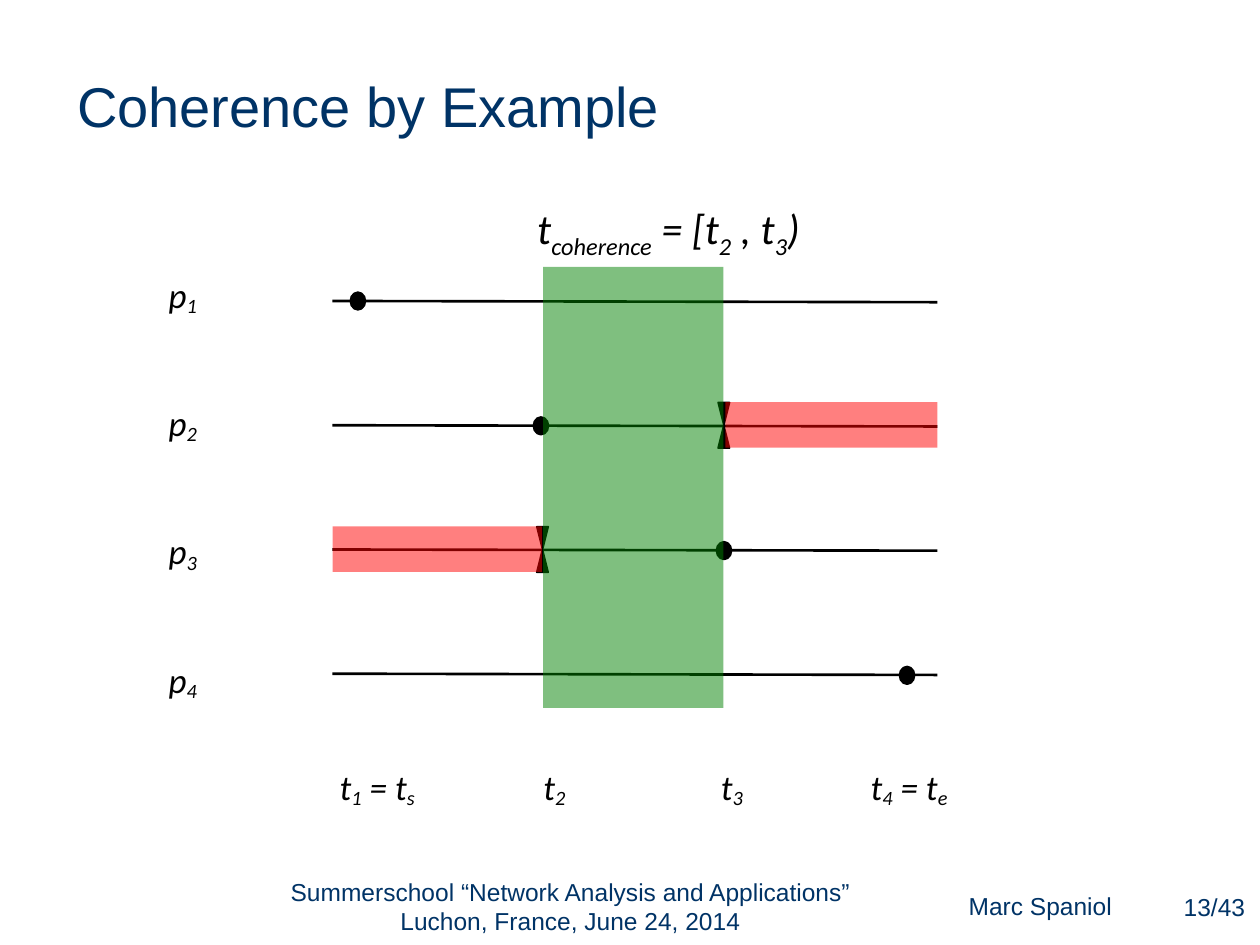
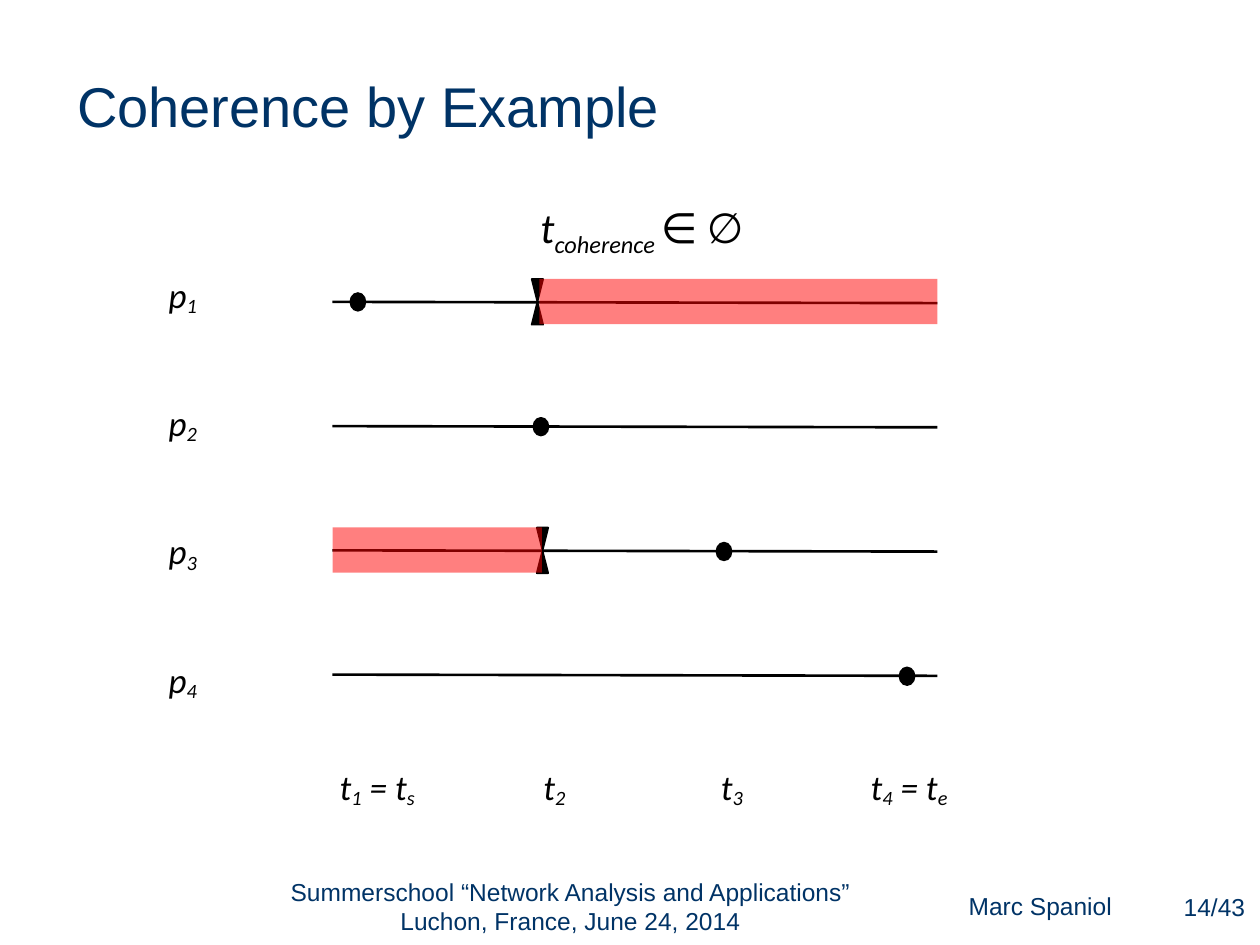
from lxml import etree
from pptx import Presentation
from pptx.dml import color
from pptx.enum import shapes, text
from pptx.oxml import ns
from pptx.util import Pt

NAVY, BLACK, GREEN, RED = "003366", "000000", "008000", "FF0000"
SHAPE = shapes.MSO_SHAPE
MIDDLE, TOP = text.MSO_ANCHOR.MIDDLE, text.MSO_ANCHOR.TOP
CENTER, LEFT = text.PP_ALIGN.CENTER, text.PP_ALIGN.LEFT

LINE_LENGTH, ROW_GAP, LINE_DROP = 345.7, 71, 0.7
BAR_HEIGHT = 26
TIME_WIDTH = 80
PAGES = ["p|1", "p|2", "p|3", "p|4"]
TIMES = ["t|1| = t|s", "t|2", "t|3", "t|4| = t|e"]


def rgb(code):
    """Return the colour for a hex string."""
    return color.RGBColor.from_string(code)


def add_text(page, box, lines, size, tint=NAVY, face="Arial", italic=False, align=CENTER,
             anchor=MIDDLE, gap=0, drop=15, insets=None):
    """Write lines in a box; every second piece between bars is a subscript."""
    frame = page.shapes.add_textbox(*map(Pt, box)).text_frame
    frame.word_wrap = True
    frame.vertical_anchor = anchor
    if insets:
        frame.margin_left, frame.margin_top, frame.margin_right, frame.margin_bottom = map(Pt, insets)
    for index, line in enumerate(lines):
        para = frame.add_paragraph() if index else frame.paragraphs[0]
        para.alignment = align
        if index:
            para.space_before = Pt(gap)
        font = para.font
        font.name, font.size, font.italic = face, Pt(size), italic
        font.color.rgb = rgb(tint)
        for order, piece in enumerate(line.split("|")):
            if not piece:
                continue
            span = para.add_run()
            span.text = piece
            if order % 2:
                span._r.get_or_add_rPr().set("baseline", str(-1000 * drop))
            if piece == "∅":
                span.font.italic = False


def add_math(page, box, lines, size=20, **options):
    """Write italic formula text."""
    add_text(page, box, lines, size, BLACK, "Calibri", True, **options)


def add_solid(parent, kind, box, tint=BLACK, outlined=True):
    """Draw a filled shape, outlined in its own colour if asked."""
    shape = parent.shapes.add_shape(kind, *map(Pt, box))
    shape.shadow.inherit = False
    shape.fill.solid()
    shape.fill.fore_color.rgb = rgb(tint)
    if outlined:
        shape.line.color.rgb = rgb(tint)
        shape.line.width = Pt(1)
    else:
        shape.line.fill.background()
    return shape


def add_veil(page, box, tint):
    """Draw a half transparent rectangle."""
    veil = add_solid(page, SHAPE.RECTANGLE, box, tint, False)
    fill = veil._element.spPr.find(ns.qn("a:solidFill"))
    etree.SubElement(fill[0], ns.qn("a:alpha"), val="50000")


def add_change(page, x, y):
    """Draw an hourglass whose waist is at the given point."""
    hourglass = page.shapes.add_group_shape()
    add_solid(hourglass, SHAPE.ISOSCELES_TRIANGLE, (x - 3.25, y, 6.5, 13))
    upper = add_solid(hourglass, SHAPE.ISOSCELES_TRIANGLE, (x - 3.25, y - 13, 6.5, 13))
    upper.rotation = 180


def add_timelines(page, left, top, changes, window):
    """Draw the page timelines, visits, changes and stale spans from a corner."""
    for row in range(len(PAGES)):
        y = top + row * ROW_GAP
        line = page.shapes.add_connector(shapes.MSO_CONNECTOR.STRAIGHT, Pt(left), Pt(y),
                                         Pt(left + LINE_LENGTH), Pt(y + LINE_DROP))
        line.line.color.rgb = rgb(BLACK)
        line.line.width = Pt(1.5)
        etree.SubElement(line._element.spPr, ns.qn("a:effectLst"))
    for visit in range(len(TIMES)):
        add_solid(page, SHAPE.OVAL, (left + 10.2 + 104.6 * visit, top - 5 + 71.3 * visit, 8.6, 10.1))
    for row, x, start, end in changes:
        add_change(page, left + x, top + row * ROW_GAP)
    if window:
        start, end = window
        add_veil(page, (left + start, top - 19.5, end - start, 252), GREEN)
    for row, x, start, end in changes:
        y = top + row * ROW_GAP - BAR_HEIGHT / 2
        add_veil(page, (left + start, y - 0.2, end - start, BAR_HEIGHT), RED)


def add_labels(page):
    """Name the timelines on the left and the times below."""
    add_math(page, (83.5, 142.6, 41.8, 272.2), PAGES, gap=48)
    for index, time in enumerate(TIMES):
        middle = 215.6 + 101.3 * index
        add_math(page, (middle - TIME_WIDTH / 2, 438.5, TIME_WIDTH, 23), [time])


def add_frame(page, number):
    """Add the title and the footer."""
    add_text(page, (37, 37.4, 504.7, 45.4), ["Coherence by Example"], 32, align=LEFT)
    add_text(page, (534.4, 499, 120.2, 37.4), ["Marc Spaniol"], 14)
    add_text(page, (150.3, 499, 351.4, 37.4),
             ["Summerschool “Network Analysis and Applications” Luchon, France, June 24, 2014"], 14)
    add_text(page, (672.7, 500.6, 43.9, 34.6), [f"{number}/43"], 14, insets=(2.2, 3.6, 3.6, 3.6))


def add_example(deck, number, formula, formula_box, top, changes, window=None):
    """Build one coherence example slide."""
    page = deck.slides.add_slide(deck.slide_layouts[6])
    add_frame(page, number)
    add_labels(page)
    add_timelines(page, 190, top, changes, window)
    add_math(page, formula_box, [formula], 24, anchor=TOP, drop=25)


def main():
    """Build and save the deck."""
    deck = Presentation()
    deck.slide_width, deck.slide_height = Pt(720), Pt(540)
    third_page = (2, 120, 0, 119.6)
    add_example(deck, 13, "t|coherence| = [t|2| , t|3|)", (293.5, 112.3, 177.1, 36), 172,
                [third_page, (1, 223.6, 224.6, LINE_LENGTH)], (120.3, 223.4))
    add_example(deck, 14, "t|coherence |∈ ||∅", (285.8, 111.6, 162, 36), 172.5,
                [third_page, (0, 117.1, 118.2, LINE_LENGTH)])
    deck.save("out.pptx")


if __name__ == "__main__":
    main()
